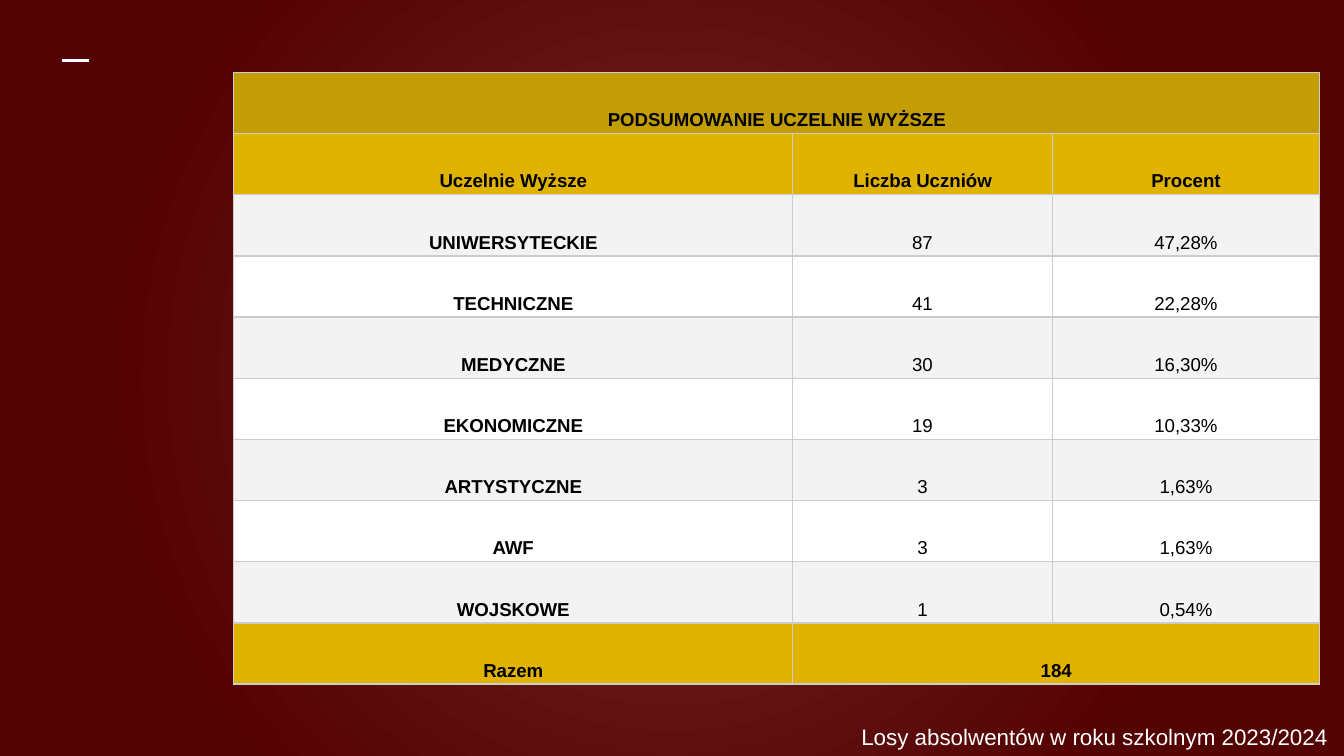
"""Build the slide summarising graduates by type of university."""
from dataclasses import dataclass

import lxml.etree
import pptx
import pptx.dml.color
import pptx.enum.shapes
import pptx.enum.text
import pptx.oxml
import pptx.oxml.ns
import pptx.slide
import pptx.table
import pptx.text.text
import pptx.util

Pt = pptx.util.Pt
qn = pptx.oxml.ns.qn
DRAWING_NS = pptx.oxml.ns.nsdecls("a")


@dataclass(frozen=True)
class Theme:
    font: str = "Arial"
    table_size: float = 10
    footer_size: float = 12
    text: str = "000000"
    light: str = "FFFFFF"
    title_fill: str = "C39D05"
    accent_fill: str = "E0B301"
    band_fills: tuple[str, str] = ("F3F3F3", "FFFFFF")
    border: str = "CCCCCC"
    border_width: float = 0.75
    backdrop: tuple[tuple[int, str], ...] = ((0, "702D2A"), (72, "550202"), (100, "540303"))


@dataclass(frozen=True)
class Row:
    texts: tuple[str, ...]
    fill: str
    bold: bool = True


THEME = Theme()
COLUMN_WIDTHS = (299.5, 139, 143.3)
ROW_HEIGHT = 32.78
RESULTS = (
    ("UNIWERSYTECKIE", "87", "47,28%"),
    ("TECHNICZNE", "41", "22,28%"),
    ("MEDYCZNE", "30", "16,30%"),
    ("EKONOMICZNE", "19", "10,33%"),
    ("ARTYSTYCZNE", "3", "1,63%"),
    ("AWF", "3", "1,63%"),
    ("WOJSKOWE", "1", "0,54%"),
)
ROWS = (
    Row(("PODSUMOWANIE UCZELNIE WYŻSZE",), THEME.title_fill),
    Row(("Uczelnie Wyższe", "Liczba Uczniów", "Procent"), THEME.accent_fill),
    *(Row(texts, THEME.band_fills[i % 2], bold=False) for i, texts in enumerate(RESULTS)),
    Row(("Razem", "184"), THEME.accent_fill),
)


def rgb(value: str) -> pptx.dml.color.RGBColor:
    """Turn a hex string into a colour."""
    return pptx.dml.color.RGBColor.from_string(value)


def style_font(p: pptx.text.text._Paragraph, size: float, color: str, bold: bool = False) -> None:
    """Format every run of a paragraph."""
    for r in p.runs:
        r.font.name = THEME.font
        r.font.size = Pt(size)
        r.font.bold = bold
        r.font.color.rgb = rgb(color)


def paint_background(s: pptx.slide.Slide) -> None:
    """Give the slide its circular gradient."""
    s.background.fill.solid()
    solid = s.element.find(".//" + qn("p:bgPr")).find(qn("a:solidFill"))
    stops = "".join(
        f'<a:gs pos="{pos * 1000}"><a:srgbClr val="{color}"/></a:gs>'
        for pos, color in THEME.backdrop
    )
    gradient = pptx.oxml.parse_xml(
        f'<a:gradFill {DRAWING_NS} rotWithShape="1"><a:gsLst>{stops}</a:gsLst>'
        '<a:path path="circle"><a:fillToRect l="50000" t="50000" r="50000" b="50000"/></a:path>'
        "</a:gradFill>"
    )
    solid.getparent().replace(solid, gradient)


def add_dash(s: pptx.slide.Slide, left: float, top: float, width: float) -> None:
    """Draw the short white line in the corner."""
    line = s.shapes.add_connector(
        pptx.enum.shapes.MSO_CONNECTOR.STRAIGHT, Pt(left), Pt(top), Pt(left + width), Pt(top)
    )
    line.line.color.rgb = rgb(THEME.light)
    line.line.width = Pt(1.5)
    lxml.etree.SubElement(line.element.spPr, qn("a:effectLst"))


def style_cell(cell: pptx.table._Cell, fill: str) -> None:
    """Set the fill, margins, anchor and borders of a cell."""
    cell.fill.solid()
    cell.fill.fore_color.rgb = rgb(fill)
    cell.margin_left = cell.margin_right = Pt(2.25)
    cell.margin_top = cell.margin_bottom = Pt(1.5)
    cell.vertical_anchor = pptx.enum.text.MSO_ANCHOR.BOTTOM
    properties = cell._tc.get_or_add_tcPr()
    for i, side in enumerate(("lnL", "lnR", "lnT", "lnB")):
        properties.insert(i, pptx.oxml.parse_xml(
            f'<a:{side} {DRAWING_NS} w="{Pt(THEME.border_width)}"><a:solidFill>'
            f'<a:srgbClr val="{THEME.border}"/></a:solidFill></a:{side}>'
        ))


def add_summary_table(s: pptx.slide.Slide, left: float, top: float) -> None:
    """Add the table, merging the last text of a short row to the right edge."""
    last = len(COLUMN_WIDTHS) - 1
    table = s.shapes.add_table(
        len(ROWS), len(COLUMN_WIDTHS), Pt(left), Pt(top),
        Pt(sum(COLUMN_WIDTHS)), Pt(ROW_HEIGHT * len(ROWS)),
    ).table
    table.first_row = table.horz_banding = False
    for column, width in zip(table.columns, COLUMN_WIDTHS):
        column.width = Pt(width)
    for i, row in enumerate(ROWS):
        table.rows[i].height = Pt(ROW_HEIGHT)
        for j in range(last + 1):
            style_cell(table.cell(i, j), row.fill)
        for j, text in enumerate(row.texts):
            cell = table.cell(i, j)
            cell.text_frame.text = text
            p = cell.text_frame.paragraphs[0]
            p.alignment = pptx.enum.text.PP_ALIGN.CENTER
            p.line_spacing = 1.15
            style_font(p, THEME.table_size, THEME.text, row.bold or j == 0)
        end = len(row.texts) - 1
        if end < last:
            table.cell(i, end).merge(table.cell(i, last))


def add_footer(s: pptx.slide.Slide, text: str) -> None:
    """Add the caption in the bottom right corner."""
    tf = s.shapes.add_textbox(Pt(454.3), Pt(380.2), Pt(265.7), Pt(27.4)).text_frame
    tf.word_wrap = True
    tf.margin_left = tf.margin_right = tf.margin_top = tf.margin_bottom = Pt(7.2)
    tf.text = text
    style_font(tf.paragraphs[0], THEME.footer_size, THEME.light)


def main() -> None:
    """Build and save the presentation."""
    prs = pptx.Presentation()
    prs.slide_width, prs.slide_height = Pt(720), Pt(405)
    s = prs.slides.add_slide(prs.slide_layouts.get_by_name("Blank"))
    paint_background(s)
    add_dash(s, 33.5, 32.5, 14.4)
    add_summary_table(s, 125.2, 38.8)
    add_footer(s, "Losy absolwentów w roku szkolnym 2023/2024")
    prs.save("out.pptx")


if __name__ == "__main__":
    main()
